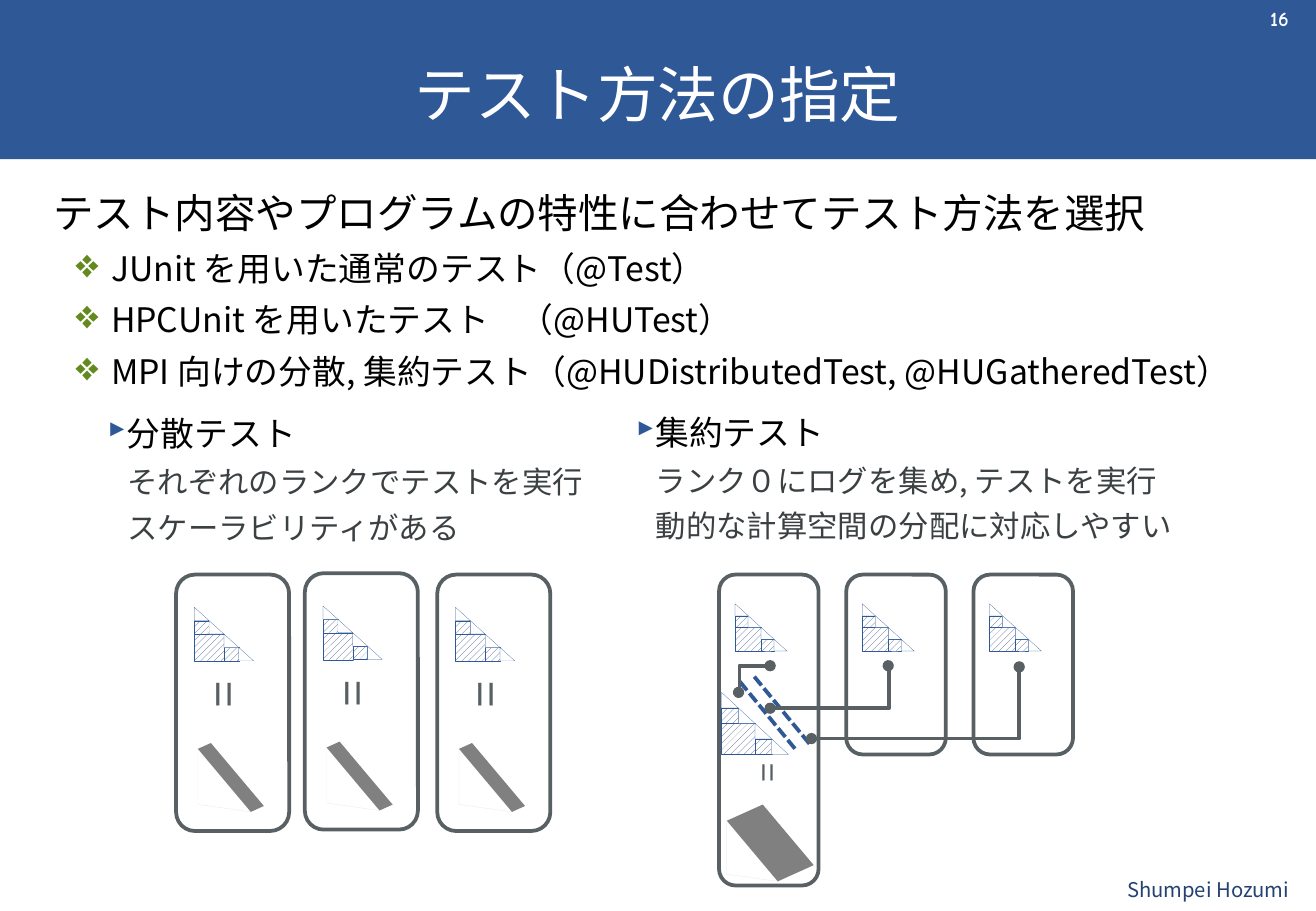
from lxml.etree import SubElement
from pptx import Presentation
from pptx.dml.color import RGBColor
from pptx.enum.dml import MSO_LINE, MSO_PATTERN
from pptx.enum.shapes import MSO_CONNECTOR as CONN, MSO_SHAPE as SHAPE
from pptx.enum.text import MSO_ANCHOR as ANCHOR, PP_ALIGN as ALIGN
from pptx.oxml.ns import qn
from pptx.util import Pt

FONT = "Noto Sans CJK JP"
BLUE, SLATE, WHITE, BLACK = "2F5897", "586064", "FFFFFF", "000000"
HATCHED = [(0, 2, 2), (0, 1, 1), (2, 3, 1)]
STEPS = [(1, 1), (2, 2), (3, 3), (0, 0)]


def rgb(value):
    return RGBColor.from_string(value)


def style_text(p, size, color, font=FONT, bold=False):
    for r in p.runs:
        r.font.size, r.font.name, r.font.bold = Pt(size), font, bold
        r.font.color.rgb = rgb(color)
        SubElement(r.font._element, qn("a:ea"), typeface=font)


def style_shape(sp, fill=None, line=None, width=0.1):
    sp.shadow.inherit = False
    if fill:
        sp.fill.solid()
        sp.fill.fore_color.rgb = rgb(fill)
    else:
        sp.fill.background()
    if line:
        sp.line.color.rgb = rgb(line)
        sp.line.width = Pt(width)
    else:
        sp.line.fill.background()


def add_box(s, kind, x, y, w, h, **style):
    sp = s.shapes.add_shape(kind, Pt(x), Pt(y), Pt(w), Pt(h))
    style_shape(sp, **style)
    return sp


def add_text(s, x, y, w, h, anchor=ANCHOR.TOP):
    tf = s.shapes.add_textbox(Pt(x), Pt(y), Pt(w), Pt(h)).text_frame
    tf.word_wrap = True
    tf.vertical_anchor = anchor
    return tf


def add_label(s, x, y, w, h, text, size, color, align, font=FONT, bold=False):
    tf = add_text(s, x, y, w, h, ANCHOR.MIDDLE)
    tf.text = text
    tf.paragraphs[0].alignment = align
    style_text(tf.paragraphs[0], size, color, font, bold)
    return tf


def add_paragraphs(tf, rows):
    for i, (text, size, color, pitch, margin, indent, bullet) in enumerate(rows):
        p = tf.add_paragraph() if i else tf.paragraphs[0]
        p.text = text
        p.line_spacing = Pt(pitch)
        style_text(p, size, color)
        pr = p._p.get_or_add_pPr()
        pr.set("marL", str(Pt(margin)))
        pr.set("indent", str(Pt(indent)))
        if bullet:
            char, tint, percent = bullet
            clr = SubElement(pr, qn("a:buClr"))
            SubElement(clr, qn("a:srgbClr"), val=tint)
            SubElement(pr, qn("a:buSzPct"), val=str(percent * 1000))
            SubElement(pr, qn("a:buChar"), char=char)


def add_header(s, x, y, w, h):
    add_box(s, SHAPE.RECTANGLE, x, y, w, h, fill=BLUE)
    title = s.shapes.title
    s.shapes._spTree.append(title._element)
    title.left, title.top, title.width, title.height = Pt(x + 24.5), Pt(y + 24.5), Pt(730.8), Pt(56.2)
    tf = title.text_frame
    tf.text = "テスト方法の指定"
    tf.vertical_anchor = ANCHOR.BOTTOM
    tf.paragraphs[0].alignment = ALIGN.CENTER
    style_text(tf.paragraphs[0], 36, WHITE)
    tf = add_label(s, x + 735, y - 3.6, 48.2, 28.8, "16", 12, WHITE, ALIGN.CENTER, "Comic Neue", True)
    tf.margin_left, tf.margin_right = Pt(2.2), Pt(3.6)


def add_summary(s, x, y, w, h):
    items = ["JUnit を用いた通常のテスト（@Test）",
             "HPCUnit を用いたテスト    （@HUTest）",
             "MPI 向けの分散, 集約テスト（@HUDistributedTest, @HUGatheredTest）"]
    rows = [("テスト内容やプログラムの特性に合わせてテスト方法を選択", 24, BLACK, 31.9, 0, 0, None)]
    rows += [(t, 20, BLACK, 30.4, 34.2, -21, ("❖", "63891F", 120)) for t in items]
    add_paragraphs(add_text(s, x, y, w, h), rows)


def add_method(s, x, y, w, h, heading, details):
    rows = [(heading, 20, BLACK, 26.2, 7.2, -14.4, ("▸", BLUE, 85))]
    rows += [(t, 18, "3B4042", 27.2, 11.5, 0, None) for t in details]
    add_paragraphs(add_text(s, x, y, w, h), rows)


def add_staircase(s, x, y, dx, dy):
    for col, row, n in HATCHED:
        sp = add_box(s, SHAPE.RECTANGLE, x + col * dx, y + row * dy, n * dx, n * dy, line=BLUE)
        sp.fill.patterned()
        sp.fill.pattern = MSO_PATTERN.WIDE_UPWARD_DIAGONAL
        sp.fill.fore_color.rgb = rgb("42568D")
        sp.fill.back_color.rgb = rgb(WHITE)
    for col, row in STEPS:
        add_box(s, SHAPE.RIGHT_TRIANGLE, x + col * dx, y + row * dy, dx, dy, fill=WHITE, line=BLUE)


def add_polygon(s, points, **style):
    pts = [(Pt(x), Pt(y)) for x, y in points]
    fb = s.shapes.build_freeform(*pts[0])
    fb.add_line_segments(pts[1:], close=True)
    style_shape(fb.convert_to_shape(), **style)


def add_prism(s, x, y, w, depth):
    h, rise = 1.19 * w, 0.45 * depth
    add_polygon(s, [(x, y), (x, y + 1.05 * w), (x + w, y + h)], fill=WHITE, line="E0E0E0")
    add_polygon(s, [(x, y), (x + depth, y - rise), (x + w + depth, y + h - rise), (x + w, y + h)],
                fill="808080")


def add_equals(s, cx, cy, size):
    side = 1.6 * size
    top = cy + 0.55 * size - side / 2
    tf = add_label(s, cx - side / 2, top, side, side, "=", size, SLATE, ALIGN.CENTER)
    tf.margin_left = tf.margin_right = tf.margin_top = tf.margin_bottom = 0
    tf._txBody.bodyPr.set("vert", "eaVert")


def add_rank(s, x, y, w, h):
    add_box(s, SHAPE.ROUNDED_RECTANGLE, x, y, w, h, line=SLATE, width=2.25)


def add_line(s, kind, x1, y1, x2, y2, color):
    c = s.shapes.add_connector(kind, Pt(x1), Pt(y1), Pt(x2), Pt(y2))
    c.line.color.rgb = rgb(color)
    c.line.width = Pt(2.25)
    SubElement(c._element.spPr, qn("a:effectLst"))
    return c


def add_elbow(s, x1, y1, x2, y2, bend):
    c = add_line(s, CONN.ELBOW, x1, y1, x2, y2, SLATE)
    av = c._element.spPr.find(qn("a:prstGeom")).get_or_add_avLst()
    SubElement(av, qn("a:gd"), name="adj1", fmla=f"val {bend}")
    ln = c.line._get_or_add_ln()
    for end in ("a:headEnd", "a:tailEnd"):
        SubElement(ln, qn(end), type="oval")


def add_distributed(s, x, y):
    for dx, dy in [(0, 0.8), (76.3, 0), (154.8, 0.8)]:
        left, top = x + dx, y + dy
        add_staircase(s, left + 10.8, top + 19.4, 8.8, 7.95)
        add_rank(s, left, top, 67, 152)
        add_equals(s, left + 29.5, top + 70.6, 28)
        add_prism(s, left + 12.9, top + 103.3, 31.4, 7.7)


def add_gathered(s, x, y):
    for i, h in enumerate([184.3, 106.6, 106.6]):
        left = x + i * 75.4
        add_staircase(s, left + 9.5, y + 17.3, 7.7, 7)
        add_rank(s, left, y, 59, h)
    add_staircase(s, x + 1.5, y + 69.8, 9.9, 9.2)
    for dx, dy in [(12.3, 63.4), (20.9, 60.5)]:
        c = add_line(s, CONN.STRAIGHT, x + dx, y + dy, x + dx + 34, y + dy + 41.4, BLUE)
        c.line.dash_style = MSO_LINE.SQUARE_DOT
    for x1, y1, x2, y2, bend in [(100.3, 54, 30.3, 79.2, -600),
                                 (177.9, 54.7, 54.8, 97.2, 0),
                                 (30.3, 54, 11.6, 69.8, 97300)]:
        add_elbow(s, x + x1, y + y1, x + x2, y + y2, bend)
    add_equals(s, x + 29.4, y + 116.9, 20)
    add_prism(s, x + 4.6, y + 145.9, 30.2, 21.3)


def main():
    prs = Presentation()
    prs.slide_width, prs.slide_height = Pt(780), Pt(540)
    s = prs.slides.add_slide(prs.slide_layouts[5])
    add_header(s, 0, 0, 780, 94.3)
    add_summary(s, 24.5, 105.1, 746, 130)
    add_method(s, 56.9, 239, 313.2, 95, "分散テスト",
               ["それぞれのランクでテストを実行", "スケーラビリティがある"])
    add_method(s, 370.1, 238.3, 365, 95, "集約テスト",
               ["ランク０にログを集め, テストを実行", "動的な計算空間の分配に対応しやすい"])
    add_distributed(s, 104.4, 339.8)
    add_gathered(s, 426.2, 340.6)
    add_label(s, 657.4, 514.1, 113.8, 25.9, "Shumpei Hozumi", 12, "234271", ALIGN.RIGHT)
    prs.save("out.pptx")


if __name__ == "__main__":
    main()
